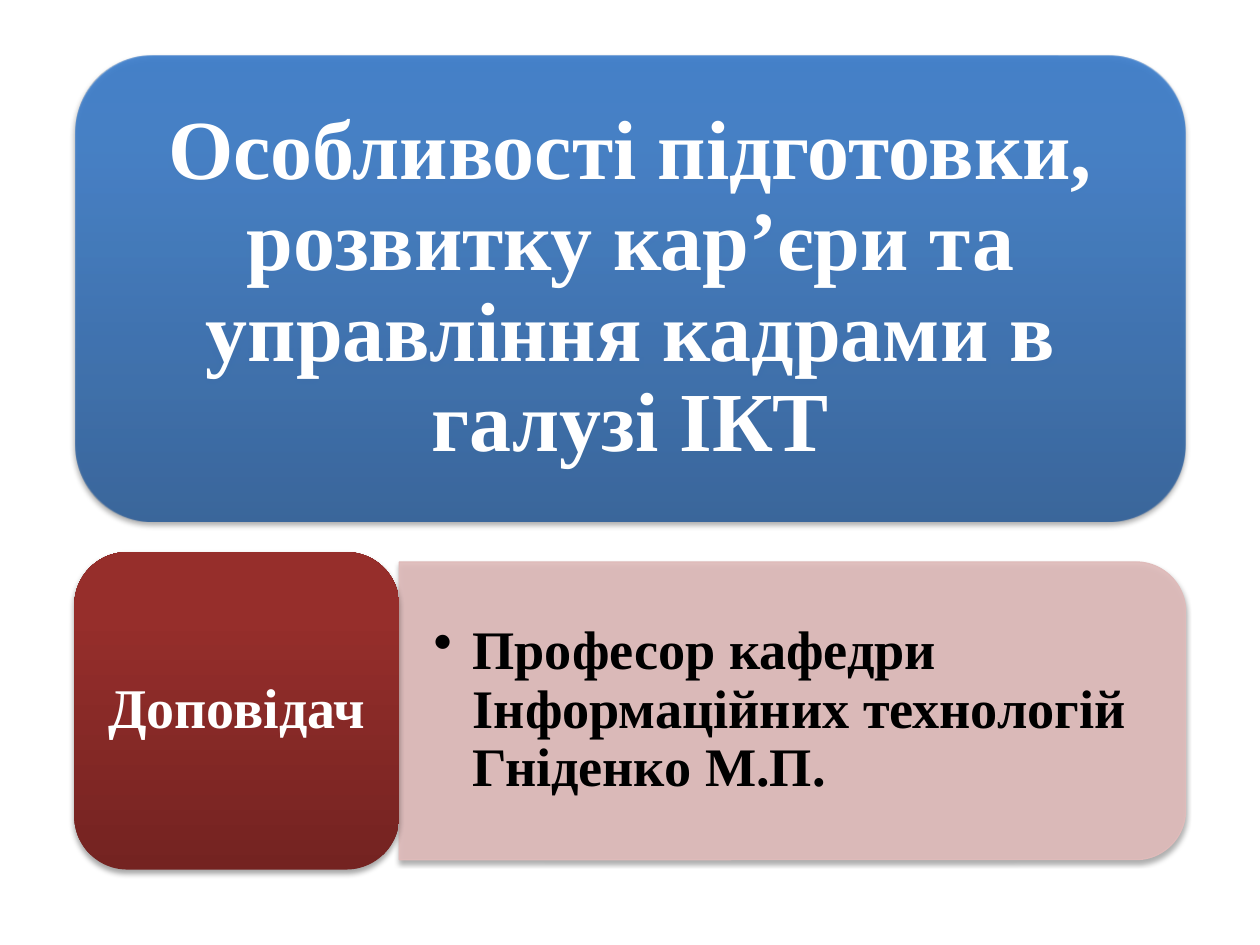
from copy import deepcopy
from dataclasses import dataclass

from lxml import etree
from pptx import Presentation
from pptx import util as u
from pptx.dml.color import RGBColor
from pptx.enum import shapes, text
from pptx.oxml import ns


@dataclass(frozen=True)
class Theme:
    font: str = "Times New Roman"
    blue: tuple = ("2F5F99", "3D7CC7", "3A7CCB")
    red: tuple = ("742321", "962E2B", "992C29")
    pink: str = "DFBBBA"
    light: str = "FFFFFF"
    dark: str = "000000"
    title_size: int = 48
    label_size: int = 32
    body_size: int = 31


THEME = Theme()
STOPS = (0, 0.8, 1)


def add_node(parent, tag, **attributes):
    return etree.SubElement(parent, ns.qn(tag), attributes)


def set_opacity(shape, percent):
    for color in shape._element.spPr.iter(ns.qn("a:srgbClr")):
        add_node(color, "a:alpha", val=str(percent * 1000))


def add_soft_shadow(shape):
    shape.shadow.inherit = False
    effects = shape._element.spPr.find(ns.qn("a:effectLst"))
    shadow = add_node(effects, "a:outerShdw", blurRad=str(u.Pt(3.1)), dist=str(u.Pt(1.8)),
                      dir="5400000", rotWithShape="0")
    color = add_node(shadow, "a:srgbClr", val="000000")
    add_node(color, "a:alpha", val="35000")


def fill_gradient(shape, colors):
    """Fill from bottom to top with three colours."""
    shape.fill.gradient()
    shape.fill.gradient_angle = 90
    stop_list = shape._element.spPr.find(".//" + ns.qn("a:gsLst"))
    stop_list.append(deepcopy(stop_list[-1]))
    for stop, position, color in zip(shape.fill.gradient_stops, STOPS, colors):
        stop.position = position
        stop.color.rgb = RGBColor.from_string(color)


def write(shape, words, *, size, color, inset, align=text.PP_ALIGN.CENTER, bullet_indent=None):
    frame = shape.text_frame
    frame.word_wrap = True
    frame.vertical_anchor = text.MSO_ANCHOR.MIDDLE
    frame.margin_left = frame.margin_right = u.Cm(inset)
    frame.margin_top = frame.margin_bottom = u.Cm(inset / 2)
    paragraph = frame.paragraphs[0]
    paragraph.alignment = align
    paragraph.line_spacing = 0.9
    if bullet_indent:
        properties = paragraph._p.get_or_add_pPr()
        properties.set("marL", str(u.Cm(bullet_indent)))
        properties.set("indent", str(-u.Cm(bullet_indent)))
        add_node(properties, "a:buChar", char="•")
    run = paragraph.add_run()
    run.text = words
    run.font.name = THEME.font
    run.font.size = u.Pt(size)
    run.font.bold = True
    run.font.color.rgb = RGBColor.from_string(color)


def add_card(slide, left, top, width, height, colors, opacity=100):
    card = slide.shapes.add_shape(shapes.MSO_SHAPE.ROUNDED_RECTANGLE,
                                  u.Cm(left), u.Cm(top), u.Cm(width), u.Cm(height))
    fill_gradient(card, colors)
    if opacity < 100:
        set_opacity(card, opacity)
    card.line.fill.background()
    add_soft_shadow(card)
    return card


def add_side_panel(slide, left, top, width, height):
    """Add a panel rounded on the right: a top-rounded shape turned by 90 degrees."""
    shift = (width - height) / 2
    panel = slide.shapes.add_shape(shapes.MSO_SHAPE.ROUND_2_SAME_RECTANGLE,
                                   u.Cm(left + shift), u.Cm(top - shift),
                                   u.Cm(height), u.Cm(width))
    panel.rotation = 90
    panel.fill.solid()
    panel.fill.fore_color.rgb = RGBColor.from_string(THEME.pink)
    set_opacity(panel, 90)
    panel.line.color.rgb = RGBColor.from_string(THEME.pink)
    panel.line.width = u.Pt(0.75)
    add_soft_shadow(panel)


def main():
    deck = Presentation()
    deck.slide_width, deck.slide_height = u.Cm(25.4), u.Cm(19.05)
    slide = deck.slides.add_slide(deck.slide_layouts[6])

    title = add_card(slide, 1.52, 1.12, 22.38, 9.4, THEME.blue, opacity=90)
    write(title, "Особливості підготовки, розвитку кар’єри та управління кадрами в галузі ІКТ",
          size=THEME.title_size, color=THEME.light, inset=0.51)

    add_side_panel(slide, 8.05, 11.33, 15.85, 6)
    speaker = slide.shapes.add_textbox(u.Cm(8.05), u.Cm(11.62), u.Cm(15.55), u.Cm(5.41))
    write(speaker, "Професор кафедри Інформаційних технологій Гніденко М.П.",
          size=THEME.body_size, color=THEME.dark, inset=0.69,
          align=text.PP_ALIGN.LEFT, bullet_indent=0.79)

    label = add_card(slide, 1.5, 11.13, 6.55, 6.4, THEME.red)
    write(label, "Доповідач", size=THEME.label_size, color=THEME.light, inset=0.33)

    deck.save("out.pptx")


if __name__ == "__main__":
    main()
